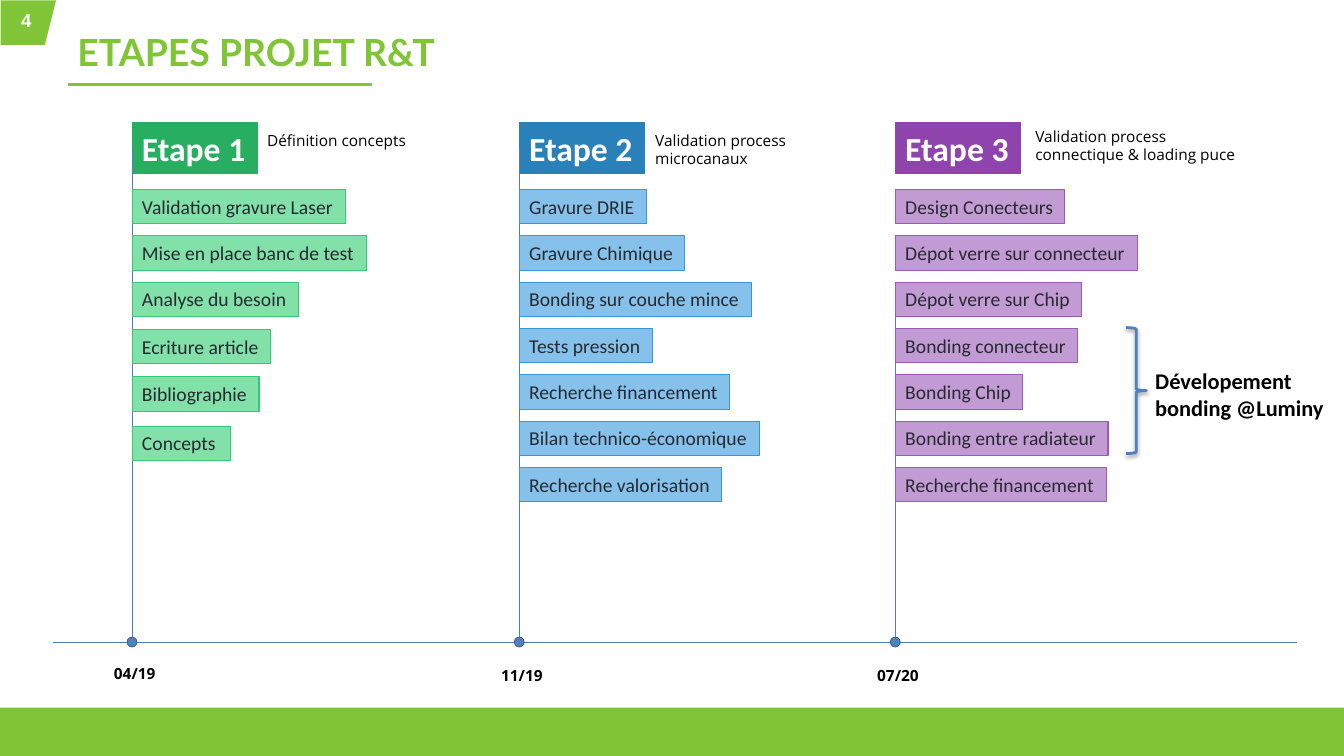
from dataclasses import dataclass

from lxml import etree
from pptx import Presentation
from pptx.dml.color import RGBColor
from pptx.enum.shapes import MSO_CONNECTOR, MSO_SHAPE
from pptx.enum.text import MSO_ANCHOR, MSO_AUTO_SIZE, PP_ALIGN
from pptx.oxml.ns import qn
from pptx.shapes.autoshape import Shape
from pptx.shapes.connector import Connector
from pptx.slide import Slide
from pptx.util import Inches, Pt

GREEN, BLUE, AXIS, DARK, WHITE, BLACK = (
    "80C535", "4F81BD", "4B7EBC", "272A31", "FFFFFF", "000000")
AXIS_Y = 6.37
DOT = 0.1
TASK_TOP, TASK_STEP, TASK_HEIGHT = 1.88, 0.46, 0.34


@dataclass
class Style:
    font: str
    size: float
    color: str = BLACK
    bold: bool = False


@dataclass
class Box:
    left: float
    top: float
    width: float
    height: float


@dataclass
class Task:
    text: str
    width: float
    shift: float = 0


@dataclass
class Stage:
    title: str
    left: float
    color: str
    task_color: str
    line_top: float
    note: str
    note_box: Box
    date: str
    date_top: float
    tasks: list[Task]


TITLE = Style("Lato", 26.7, GREEN, True)
NUMBER = Style("Arial", 13.3, WHITE, True)
HEADER = Style("Calibri", 24, WHITE, True)
TASK = Style("Calibri", 14, DARK)
CALLOUT = Style("Calibri", 16, BLACK, True)
NOTE = Style("Open Sans", 11)
DATE = Style("Open Sans", 11, BLACK, True)

STAGES = [
    Stage("Etape 1", 1.31, "27AE61", "2FCC71", 1.47,
          "Définition concepts", Box(2.55, 1.25, 1.91, 0.29), "04/19", 6.54,
          [Task("Validation gravure Laser", 2.12),
           Task("Mise en place banc de test", 2.33),
           Task("Analyse du besoin", 1.65),
           Task("Ecriture article", 1.37, 0.01),
           Task("Bibliographie", 1.26, 0.02),
           Task("Concepts", 0.98, 0.05)]),
    Stage("Etape 2", 5.15, "2A80B9", "3598DC", 1.47,
          "Validation process microcanaux", Box(6.4, 1.25, 1.84, 0.47), "11/19", 6.56,
          [Task("Gravure DRIE", 1.26),
           Task("Gravure Chimique", 1.64),
           Task("Bonding sur couche mince", 2.3),
           Task("Tests pression", 1.32),
           Task("Recherche financement", 2.09),
           Task("Bilan technico-économique", 2.38),
           Task("Recherche valorisation", 2.01)]),
    Stage("Etape 3", 8.88, "8F44AD", "9C59B8", 2.83,
          "Validation process connectique & loading puce", Box(10.17, 1.21, 2.39, 0.47),
          "07/20", 6.56,
          [Task("Design Conecteurs", 1.68),
           Task("Dépot verre sur connecteur", 2.4),
           Task("Dépot verre sur Chip", 1.85),
           Task("Bonding connecteur", 1.81),
           Task("Bonding Chip", 1.26),
           Task("Bonding entre radiateur", 2.11),
           Task("Recherche financement", 2.09)]),
]


def rgb(color: str) -> RGBColor:
    return RGBColor.from_string(color)


def lengths(box: Box) -> list[int]:
    return [Inches(value) for value in (box.left, box.top, box.width, box.height)]


def write(shape: Shape, text: str, style: Style, wrap: bool = True) -> None:
    frame = shape.text_frame
    frame.word_wrap = wrap
    frame.auto_size = MSO_AUTO_SIZE.SHAPE_TO_FIT_TEXT
    frame.vertical_anchor = MSO_ANCHOR.TOP
    paragraph = frame.paragraphs[0]
    paragraph.text = text
    paragraph.alignment = PP_ALIGN.LEFT
    font = paragraph.font
    font.name, font.size, font.bold = style.font, Pt(style.size), style.bold
    font.color.rgb = rgb(style.color)


def add_text(slide: Slide, box: Box, text: str, style: Style, wrap: bool = True) -> Shape:
    shape = slide.shapes.add_textbox(*lengths(box))
    write(shape, text, style, wrap)
    return shape


def add_shape(slide: Slide, kind: MSO_SHAPE, box: Box, fill: str | None = None,
              line: str | None = None, line_width: float = 0.75) -> Shape:
    shape = slide.shapes.add_shape(kind, *lengths(box))
    shape.shadow.inherit = False
    if fill:
        shape.fill.solid()
        shape.fill.fore_color.rgb = rgb(fill)
    else:
        shape.fill.background()
    if line:
        shape.line.color.rgb = rgb(line)
        shape.line.width = Pt(line_width)
    else:
        shape.line.fill.background()
    return shape


def add_line(slide: Slide, start: tuple[float, float], end: tuple[float, float],
             color: str = AXIS, width: float = 0.75) -> Connector:
    line = slide.shapes.add_connector(
        MSO_CONNECTOR.STRAIGHT, *(Inches(value) for value in (*start, *end)))
    line.line.color.rgb = rgb(color)
    line.line.width = Pt(width)
    etree.SubElement(line.element.spPr, qn("a:effectLst"))
    return line


def set_opacity(color_element: etree._Element, percent: int) -> None:
    etree.SubElement(color_element, qn("a:alpha"), val=str(percent * 1000))


def add_drop_shadow(shape: Shape) -> None:
    effects = shape.element.spPr.find(qn("a:effectLst"))
    shadow = etree.SubElement(effects, qn("a:outerShdw"), blurRad=str(Pt(3.1)),
                              dist=str(Pt(1.6)), dir="5400000", rotWithShape="0")
    set_opacity(etree.SubElement(shadow, qn("a:srgbClr"), val=BLACK), 38)


def add_frame(slide: Slide) -> None:
    """Draw the page number tab, the footer band and the underlined title."""
    tab = add_shape(slide, MSO_SHAPE.FLOWCHART_MANUAL_INPUT, Box(0.06, -0.05, 0.44, 0.55), GREEN)
    tab.rotation = 270
    tab.element.spPr.find(qn("a:xfrm")).set("flipV", "1")
    number = add_text(slide, Box(-0.01, 0.04, 0.54, 0.33), "4", NUMBER, wrap=False)
    number.text_frame.paragraphs[0].alignment = PP_ALIGN.CENTER
    add_shape(slide, MSO_SHAPE.RECTANGLE, Box(0, 7.02, 13.33, 0.48), GREEN)
    add_line(slide, (0.67, 0.84), (3.69, 0.84), GREEN, 2)
    title = add_text(slide, Box(0.67, 0.17, 12, 0.69), "ETAPES PROJET R&T", TITLE)
    title.text_frame.auto_size = MSO_AUTO_SIZE.NONE
    title.text_frame.vertical_anchor = MSO_ANCHOR.MIDDLE


def add_stage(slide: Slide, stage: Stage) -> None:
    dot = add_shape(slide, MSO_SHAPE.OVAL,
                    Box(stage.left - DOT / 2, AXIS_Y - DOT / 2, DOT, DOT), BLUE, DARK, 0.25)
    header = add_shape(slide, MSO_SHAPE.RECTANGLE, Box(stage.left, 1.22, 1.24, 0.5),
                       stage.color, stage.color)
    write(header, stage.title, HEADER, wrap=False)
    stem = add_line(slide, (stage.left, AXIS_Y - DOT / 2), (stage.left, stage.line_top))
    stem.begin_connect(dot, 0)
    for row, task in enumerate(stage.tasks):
        top = TASK_TOP + row * TASK_STEP + task.shift
        bar = add_shape(slide, MSO_SHAPE.RECTANGLE,
                        Box(stage.left, top, task.width, TASK_HEIGHT),
                        stage.task_color, stage.task_color)
        set_opacity(bar.element.spPr.find(qn("a:solidFill"))[0], 60)
        write(bar, task.text, TASK, wrap=False)
    add_text(slide, stage.note_box, stage.note, NOTE)
    date = add_text(slide, Box(stage.left - 0.18, stage.date_top, 0.75, 0.29), stage.date, DATE)
    date.text_frame.margin_left = 0


def main() -> None:
    presentation = Presentation()
    presentation.slide_width, presentation.slide_height = Inches(13.33), Inches(7.5)
    slide = presentation.slides.add_slide(presentation.slide_layouts[6])
    add_frame(slide)
    add_line(slide, (0.53, AXIS_Y), (12.86, AXIS_Y))
    for stage in STAGES:
        add_stage(slide, stage)
    brace = add_shape(slide, MSO_SHAPE.RIGHT_BRACE, Box(11.17, 3.25, 0.2, 1.25),
                      line=BLUE, line_width=2)
    add_drop_shadow(brace)
    add_text(slide, Box(11.36, 3.59, 1.94, 0.64), "Dévelopement bonding @Luminy", CALLOUT)
    presentation.save("out.pptx")


if __name__ == "__main__":
    main()
